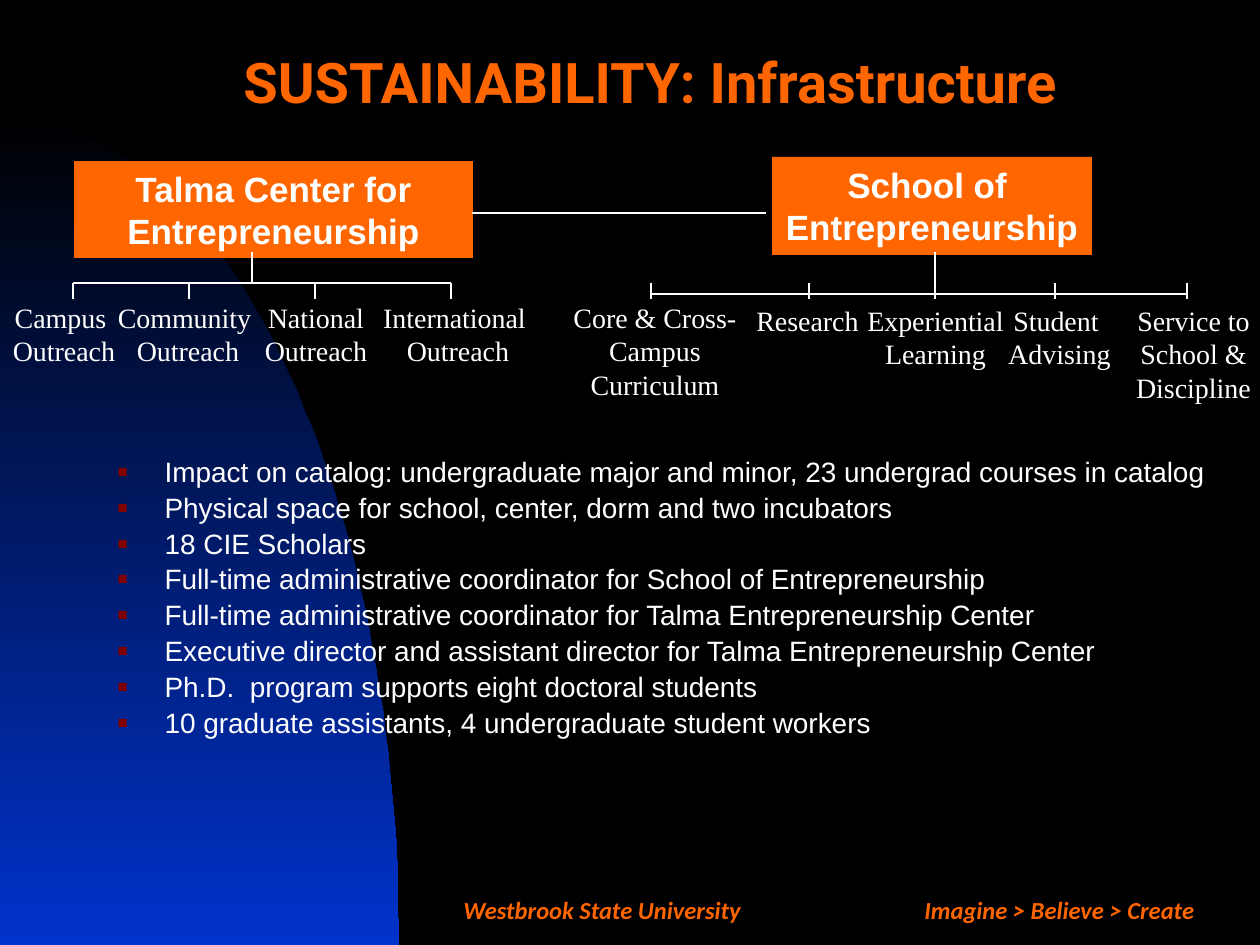
from math import cos, pi, sin

from lxml import etree
from pptx import Presentation
from pptx.dml.color import RGBColor
from pptx.enum.shapes import MSO_CONNECTOR, MSO_SHAPE
from pptx.enum.text import MSO_ANCHOR, MSO_AUTO_SIZE, PP_ALIGN
from pptx.oxml.ns import qn
from pptx.util import Pt

PX = 914400 / 126
W, H = 1260, 945
CENTER, LEFT = PP_ALIGN.CENTER, PP_ALIGN.LEFT
TOP, MIDDLE = MSO_ANCHOR.TOP, MSO_ANCHOR.MIDDLE
RECT, STRAIGHT = MSO_SHAPE.RECTANGLE, MSO_CONNECTOR.STRAIGHT
NO_AUTOFIT = MSO_AUTO_SIZE.NONE
ORANGE, WHITE, BLACK, BLUE, MAROON = "FF6600", "FFFFFF", "000000", "0033CC", "800000"


def rgb(value):
    return RGBColor.from_string(value)


def write(sp, box, lines, font, size, color, align=CENTER, anchor=TOP,
          bold=False, italic=False, wrap=True):
    """Place a shape and fill it with one paragraph per line."""
    sp.left, sp.top, sp.width, sp.height = [round(v * PX) for v in box]
    tf = sp.text_frame
    tf.auto_size = NO_AUTOFIT
    tf.word_wrap = wrap
    tf.vertical_anchor = anchor
    tf.text = "\n".join(lines)
    for p in tf.paragraphs:
        p.alignment = align
        p.font.name, p.font.size = font, Pt(size)
        p.font.bold, p.font.italic = bold, italic
        p.font.color.rgb = rgb(color)
    return tf


prs = Presentation()
prs.slide_width, prs.slide_height = round(W * PX), round(H * PX)
s = prs.slides.add_slide(prs.slide_layouts[1])
s.background.fill.solid()
s.background.fill.fore_color.rgb = rgb(BLACK)

# Quarter ellipse with a gradient, centred on the lower left corner
STEPS = 60
angles = [i * pi / 2 / STEPS for i in range(STEPS + 1)]
arc = [(399 * sin(a), H - 829 * cos(a)) for a in angles]
builder = s.shapes.build_freeform(0, H, scale=PX)
builder.add_line_segments(arc, close=True)
swoosh = builder.convert_to_shape()
swoosh.shadow.inherit = False
swoosh.line.fill.background()
swoosh.fill.gradient()
swoosh.fill.gradient_angle = 270
for stop, color, position in zip(swoosh.fill.gradient_stops, (BLACK, BLUE), (0, 1)):
    stop.color.rgb = rgb(color)
    stop.position = position

# Send it behind the placeholders
s.shapes.title._element.addprevious(swoosh._element)

# Title
tf = write(s.shapes.title, (73, 10, 1155, 158), ["SUSTAINABILITY: Infrastructure"],
           "Roboto", 32, ORANGE, anchor=MIDDLE, bold=True)
tf.paragraphs[0].line_spacing = 0.7

# The two units
units = [
    ((74, 161, 399, 97), ["Talma Center for", "Entrepreneurship"], True),
    ((772, 157, 320, 98), ["School of ", "Entrepreneurship"], False),
]
for box, lines, wrap in units:
    sp = s.shapes.add_shape(RECT, 0, 0, 0, 0)
    sp.shadow.inherit = False
    sp.fill.solid()
    sp.fill.fore_color.rgb = rgb(ORANGE)
    sp.line.fill.background()
    write(sp, box, lines, "Arial", 20, WHITE, bold=True, wrap=wrap)

# Activities below each unit: left, top, width, lines
activities = [
    (0, 294, 128, ["Campus ", "Outreach"]),
    (105, 294, 166, ["Community ", "Outreach"]),
    (252, 294, 128, ["National", "Outreach"]),
    (370, 294, 176, ["International ", "Outreach"]),
    (560, 294, 190, ["Core & Cross-", "Campus", "Curriculum"]),
    (743, 297, 129, ["Research"]),
    (854, 297, 163, ["Experiential", "Learning"]),
    (995, 297, 129, ["Student ", "Advising"]),
    (1127, 297, 133, ["Service to", "School &", "Discipline"]),
]
for x, y, w, lines in activities:
    write(s.shapes.add_textbox(0, 0, 0, 0), (x, y, w, 13 + 34 * len(lines)), lines,
          "Times New Roman", 16, WHITE, wrap=False)

# Connecting lines: the link, then a bar, a stem and ticks for each unit
lines = [(472, 213, 766, 213)]
for bar_y, stem_x, ticks in [(283, 252, (73, 189, 315, 451)),
                             (294, 935, (651, 809, 935, 1055, 1187))]:
    lines.append((ticks[0], bar_y, ticks[-1], bar_y))
    lines.append((stem_x, 252, stem_x, 283))
    lines += [(x, 283, x, 299) for x in ticks]
for ends in lines:
    line = s.shapes.add_connector(STRAIGHT, *[round(v * PX) for v in ends])
    line.line.color.rgb = rgb(WHITE)
    line.line.width = Pt(0.75)
    etree.SubElement(line._element.spPr, qn("a:effectLst"))

# Bullet list
points = [
    "Impact on catalog: undergraduate major and minor, 23 undergrad courses in catalog",
    "Physical space for school, center, dorm and two incubators",
    "18 CIE Scholars",
    "Full-time administrative coordinator for School of Entrepreneurship",
    "Full-time administrative coordinator for Talma Entrepreneurship Center",
    "Executive director and assistant director for Talma Entrepreneurship Center",
    "Ph.D.  program supports eight doctoral students",
    "10 graduate assistants, 4 undergraduate student workers",
]
tf = write(s.placeholders[1], (105, 452, 1124, 336), points, "Arial", 16, WHITE, align=LEFT)
for p in tf.paragraphs:
    p.line_spacing = 0.9
    p.space_before = Pt(3.2)
    pPr = p._p.get_or_add_pPr()
    pPr.set("marL", str(round(47 * PX)))
    pPr.set("indent", str(round(-47 * PX)))
    bullet_color = etree.Element(qn("a:buClr"))
    etree.SubElement(bullet_color, qn("a:srgbClr"), val=MAROON)
    bullet_size = etree.Element(qn("a:buSzPct"), val="60000")
    bullet_char = etree.Element(qn("a:buChar"), char="■")
    font_props = pPr.find(qn("a:defRPr"))
    for element in (bullet_color, bullet_size, bullet_char):
        font_props.addprevious(element)

# Footer
for x, w, text in [(451, 420, "Westbrook State University"),
                   (912, 340, "Imagine > Believe > Create")]:
    write(s.shapes.add_textbox(0, 0, 0, 0), (x, 885, w, 50), [text], "Calibri", 14, ORANGE,
          align=LEFT, anchor=MIDDLE, bold=True, italic=True)

prs.save("out.pptx")
